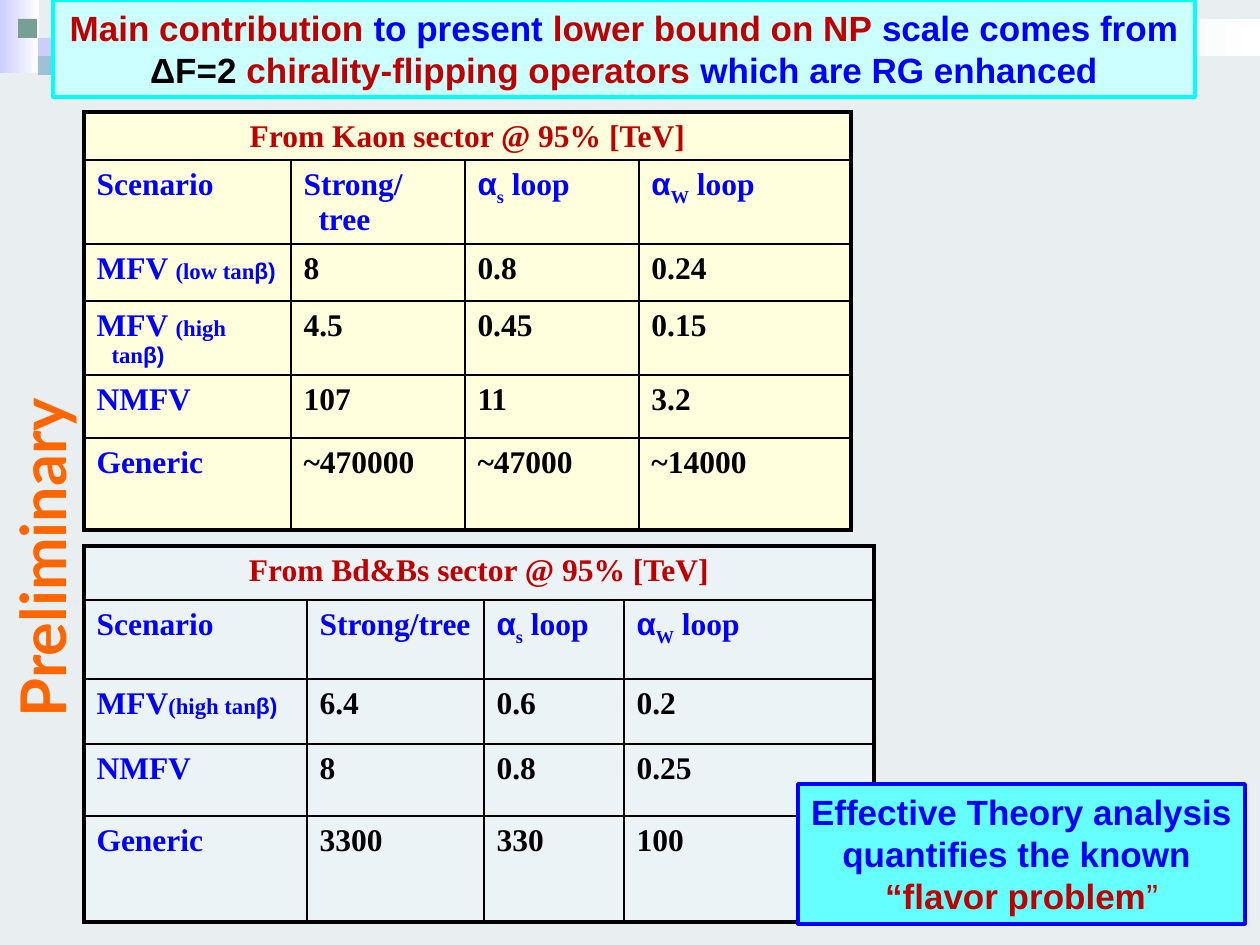
from lxml.etree import SubElement
from pptx import Presentation
from pptx.dml.color import RGBColor
from pptx.enum.shapes import MSO_SHAPE
from pptx.enum.text import MSO_ANCHOR, PP_ALIGN
from pptx.oxml.ns import qn
from pptx.util import Inches, Pt

PX_PER_INCH = 126
BLUE, RED, BLACK = "0000FF", "C00000", "000000"
LAVENDER, GREEN, SKY, WHITE = "CCCCFF", "779F92", "9DC2D7", "FFFFFF"
ORANGE, AQUA, PALE_AQUA, CYAN = "FF6600", "66FFFF", "CCFFFF", "00FFFF"
SERIF, SANS, DISPLAY = "Times New Roman", "Arial", "Lato"


def px(count):
    return round(count * Inches(1) / PX_PER_INCH)


def color(code):
    return RGBColor.from_string(code)


def add_span(para, text, size=18, font=SERIF, fill=BLACK, bold=True, baseline=0):
    span = para.add_run()
    span.text = text
    span.font.size = Pt(size)
    span.font.name = font
    span.font.bold = bold
    span.font.color.rgb = color(fill)
    if baseline:
        span.font._element.set("baseline", str(baseline * 1000))


def add_spans(para, spans, **common):
    """Add (text, format) pairs on top of a common format."""
    for text, own in spans:
        add_span(para, text, **{**common, **own})


def draw_borders(cell, widths):
    """Draw the four cell borders; widths are points, left, right, top, bottom."""
    properties = cell._tc.get_or_add_tcPr()
    for index, (side, width) in enumerate(zip("LRTB", widths)):
        line = SubElement(properties, qn(f"a:ln{side}"), w=str(Pt(width)))
        fill = SubElement(line, qn("a:solidFill"))
        SubElement(fill, qn("a:srgbClr"), val=BLACK)
        properties.insert(index, line)


class SlideBuilder:
    inner_line, outer_line = 1, 2.25
    hanging = px(15)

    def __init__(self, slide):
        self.slide = slide

    def background(self, fill):
        self.slide.background.fill.solid()
        self.slide.background.fill.fore_color.rgb = color(fill)

    def rectangle(self, area, fill, fade_to=None, line=None, line_width=1):
        box = self.slide.shapes.add_shape(MSO_SHAPE.RECTANGLE, *map(px, area))
        box.shadow.inherit = False
        if fade_to:
            box.fill.gradient()
            box.fill.gradient_angle = 0
            for stop, code in zip(box.fill.gradient_stops, (fill, fade_to)):
                stop.color.rgb = color(code)
        else:
            box.fill.solid()
            box.fill.fore_color.rgb = color(fill)
        if line:
            box.line.color.rgb = color(line)
            box.line.width = Pt(line_width)
        else:
            box.line.fill.background()
        return box

    def callout(self, area, lines, wrap=True, **look):
        frame = self.rectangle(area, **look).text_frame
        frame.word_wrap = wrap
        frame.vertical_anchor = MSO_ANCHOR.TOP
        for index, spans in enumerate(lines):
            para = frame.add_paragraph() if index else frame.paragraphs[0]
            para.alignment = PP_ALIGN.CENTER
            add_spans(para, spans, size=20, font=SANS, fill=BLUE)

    def vertical_label(self, area, text, **style):
        box = self.slide.shapes.add_textbox(*map(px, area))
        box.rotation = 270
        box.text_frame.word_wrap = True
        add_span(box.text_frame.paragraphs[0], text, **style)

    def table(self, left, top, widths, heights, title, rows, fill):
        frame = self.slide.shapes.add_table(
            len(heights), len(widths), px(left), px(top),
            px(sum(widths)), px(sum(heights)))
        table = frame.table
        table.first_row = table.horz_banding = False
        for column, width in zip(table.columns, widths):
            column.width = px(width)
        for row, height in zip(table.rows, heights):
            row.height = px(height)
        table.cell(0, 0).merge(table.cell(0, len(widths) - 1))

        for r in range(len(heights)):
            for c in range(len(widths)):
                cell = table.cell(r, c)
                cell.fill.solid()
                cell.fill.fore_color.rgb = color(fill)
                at_edge = (c == 0, r == 0 or c == len(widths) - 1,
                           r == 0, r == len(heights) - 1)
                draw_borders(cell, [self.outer_line if edge else self.inner_line
                                    for edge in at_edge])
        self.cell_text(table.cell(0, 0), title, PP_ALIGN.CENTER, fill=RED)
        for r, row in enumerate(rows, start=1):
            for c, content in enumerate(row):
                is_label = r == 1 or c == 0
                self.cell_text(table.cell(r, c), content,
                               fill=BLUE if is_label else BLACK)

    def cell_text(self, cell, content, align=PP_ALIGN.LEFT, **style):
        """Fill a cell with a string or with (text, format) pairs."""
        para = cell.text_frame.paragraphs[0]
        para.alignment = align
        para.line_spacing = 1.02
        para.space_after = Pt(14.2)
        properties = para._p.get_or_add_pPr()
        properties.set("marL", str(self.hanging))
        properties.set("indent", str(-self.hanging))
        spans = [(content, {})] if isinstance(content, str) else content
        add_spans(para, spans, **style)


def loop(index):
    return [("α", {"font": SANS}), (index, {"baseline": -25}), (" loop", {})]


def mfv(name, level):
    return [(name, {}), (f"({level} tan", {"size": 13}),
            ("β)", {"size": 13, "font": SANS})]


HEADER = ["Scenario", "Strong/tree", loop("s"), loop("W")]
KAON_ROWS = [
    HEADER,
    [mfv("MFV ", "low"), "8", "0.8", "0.24"],
    [mfv("MFV ", "high"), "4.5", "0.45", "0.15"],
    ["NMFV", "107", "11", "3.2"],
    ["Generic", "~470000", "~47000", "~14000"],
]
B_ROWS = [
    HEADER,
    [mfv("MFV", "high"), "6.4", "0.6", "0.2"],
    ["NMFV", "8", "0.8", "0.25"],
    ["Generic", "3300", "330", "100"],
]
BANNER = [
    [("Main contribution ", {"fill": RED}), ("to present ", {}),
     ("lower bound on NP", {"fill": RED}), (" scale comes from", {})],
    [("ΔF=2 ", {"fill": BLACK}), ("chirality-flipping operators ", {"fill": RED}),
     ("which are RG enhanced", {})],
]
CONCLUSION = [
    [("Effective Theory analysis", {})],
    [("quantifies the known ", {})],
    [("“flavor problem", {"fill": RED}), ("”", {"fill": RED, "bold": False})],
]


def main():
    deck = Presentation()
    deck.slide_width, deck.slide_height = px(1260), px(945)
    page = SlideBuilder(deck.slides.add_slide(deck.slide_layouts[6]))

    page.background("E9EEF1")
    page.rectangle((0, 0, 39, 73), LAVENDER, fade_to=WHITE)
    page.rectangle((57, 19, 1203, 37), GREEN, fade_to=WHITE)
    for left, top, fill in ((76, 0, LAVENDER), (38, 38, LAVENDER),
                            (18, 19, GREEN), (38, 56, SKY)):
        page.rectangle((left, top, 19, 19), fill)

    page.table(84, 112, (207, 174, 174, 212), (47, 77, 57, 73, 63, 92),
               "From Kaon sector @ 95% [TeV]", KAON_ROWS, "FFFFDD")
    page.table(84, 546, (223, 177, 140, 250), (54, 79, 65, 72, 106),
               "From Bd&Bs sector @ 95% [TeV]", B_ROWS, "EBF3F7")

    page.vertical_label((-154, 490, 391, 88), "Preliminary",
                        size=36, font=DISPLAY, fill=ORANGE)
    page.callout((53, 0, 1142, 97), BANNER, wrap=False,
                 fill=PALE_AQUA, line=CYAN, line_width=2.5)
    page.callout((798, 784, 447, 140), CONCLUSION,
                 fill=AQUA, line=BLUE, line_width=2)
    deck.save("out.pptx")


if __name__ == "__main__":
    main()
